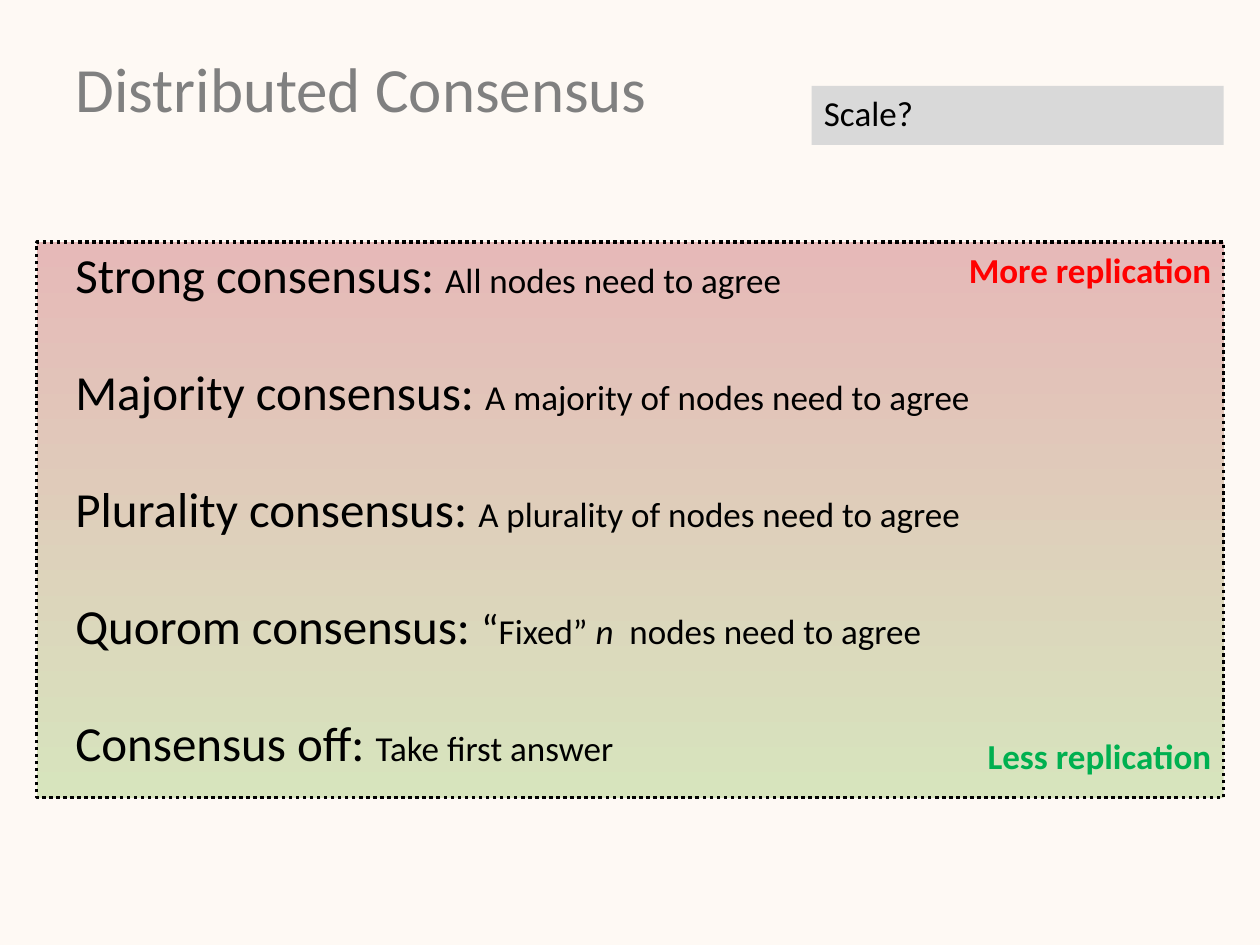
from lxml import etree
from pptx import Presentation
from pptx.dml.color import RGBColor
from pptx.enum.dml import MSO_LINE
from pptx.enum.shapes import MSO_SHAPE
from pptx.enum.text import MSO_ANCHOR, PP_ALIGN
from pptx.oxml.ns import qn
from pptx.util import Cm, Pt

RECT = MSO_SHAPE.RECTANGLE
DOTS = MSO_LINE.ROUND_DOT
LEFT, RIGHT = PP_ALIGN.LEFT, PP_ALIGN.RIGHT
TOP, MIDDLE = MSO_ANCHOR.TOP, MSO_ANCHOR.MIDDLE

# Content: each level is a name and its runs (text, size, italic)
TITLE = "Distributed Consensus"
ASK = "Scale?"
LABELS = [("More replication", "more"), ("Less replication", "less")]
LEVELS = [
    ("Strong consensus: ", [("All nodes need to agree", "small", False)]),
    ("Majority consensus: ", [("A majority of nodes need to agree", "small", False)]),
    ("Plurality consensus: ", [("A plurality of nodes need to agree", "small", False)]),
    ("Quorom consensus: ", [("“", "mid", False), ("Fixed” ", "small", False),
                            ("n  ", "small", True),
                            ("nodes need to agree", "small", False)]),
    ("Consensus off: ", [("Take first answer", "small", False)]),
]

THEME = {
    "font": "Calibri",
    "size": {"title": 36, "big": 28, "mid": 24, "small": 20},
    "color": {"page": "FEF9F4", "title": "808080", "text": "000000",
              "box": "D9D9D9", "low": "D7E4BD", "high": "E6B9B8",
              "more": "FF0000", "less": "00B050"},
}

# Places in cm: left, top, width, height
HEAD = (1.27, 0.76, 22.86, 1.98)
PANEL = (0.74, 4.88, 23.93, 11.2)
BODY = (1.27, 3.38, 22.86, 13.64)
NOTE = (16.36, 1.73, 8.31, 1.19)
INSET = 1.55       # from the top of the body to its first line
LEVEL_GAP = 33.2   # points between levels
LABEL_GAP = 254    # points between the two labels


def tint(name):
    return RGBColor.from_string(THEME["color"][name])


def add_run(para, text, size, color="text", bold=False, italic=False):
    run = para.add_run()
    run.text = text
    font = run.font
    font.name = THEME["font"]
    font.size = Pt(THEME["size"][size])
    font.color.rgb = tint(color)
    font.bold, font.italic = bold, italic


def add_para(frame, first, gap=0, align=LEFT):
    para = frame.paragraphs[0] if first else frame.add_paragraph()
    para.alignment = align
    para.space_before = Pt(0 if first else gap)
    return para


def add_rect(slide, place):
    rect = slide.shapes.add_shape(RECT, *map(Cm, place))
    rect.shadow.inherit = False
    rect.text_frame.vertical_anchor = TOP
    return rect


deck = Presentation()
deck.slide_width, deck.slide_height = Cm(25.4), Cm(19.05)
slide = deck.slides.add_slide(deck.slide_layouts[5])
slide.background.fill.solid()
slide.background.fill.fore_color.rgb = tint("page")

# Title
title = slide.shapes.title
title.left, title.top, title.width, title.height = map(Cm, HEAD)
title.text_frame.vertical_anchor = MIDDLE
add_run(add_para(title.text_frame, True), TITLE, "title", "title")

# Gradient panel with its two labels
panel = add_rect(slide, PANEL)
panel.fill.gradient()
panel.fill.gradient_angle = 90
for stop, name, spot in zip(panel.fill.gradient_stops, ("low", "high"), (0, 1)):
    stop.color.rgb = tint(name)
    stop.position = spot
panel.line.color.rgb = tint("text")
panel.line.width = Pt(2)
panel.line.dash_style = DOTS
for i, (text, color) in enumerate(LABELS):
    para = add_para(panel.text_frame, i == 0, LABEL_GAP, RIGHT)
    add_run(para, text, "small", color, bold=True)

# Consensus levels
frame = slide.shapes.add_textbox(*map(Cm, BODY)).text_frame
frame.word_wrap = True
frame.margin_top = Cm(INSET)
for i, (name, runs) in enumerate(LEVELS):
    para = add_para(frame, i == 0, LEVEL_GAP)
    add_run(para, name, "big")
    for text, size, italic in runs:
        add_run(para, text, size, italic=italic)

# Question box, slightly transparent
note = add_rect(slide, NOTE)
note.fill.solid()
note.fill.fore_color.rgb = tint("box")
note.line.fill.background()
shade = note.fill._xPr.find(qn("a:solidFill"))[0]
etree.SubElement(shade, qn("a:alpha"), val="98000")
add_run(add_para(note.text_frame, True), ASK, "small")

deck.save("out.pptx")
